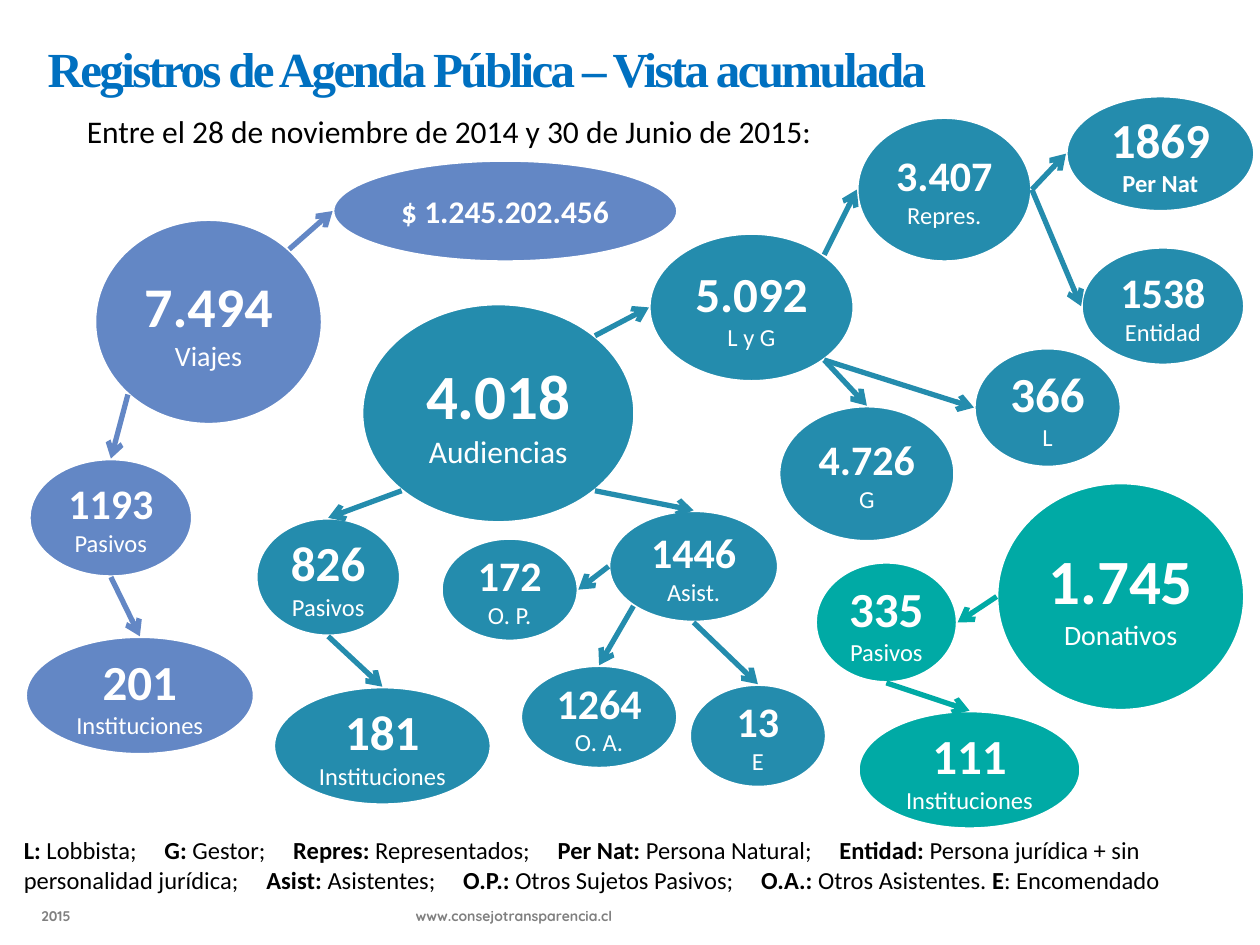
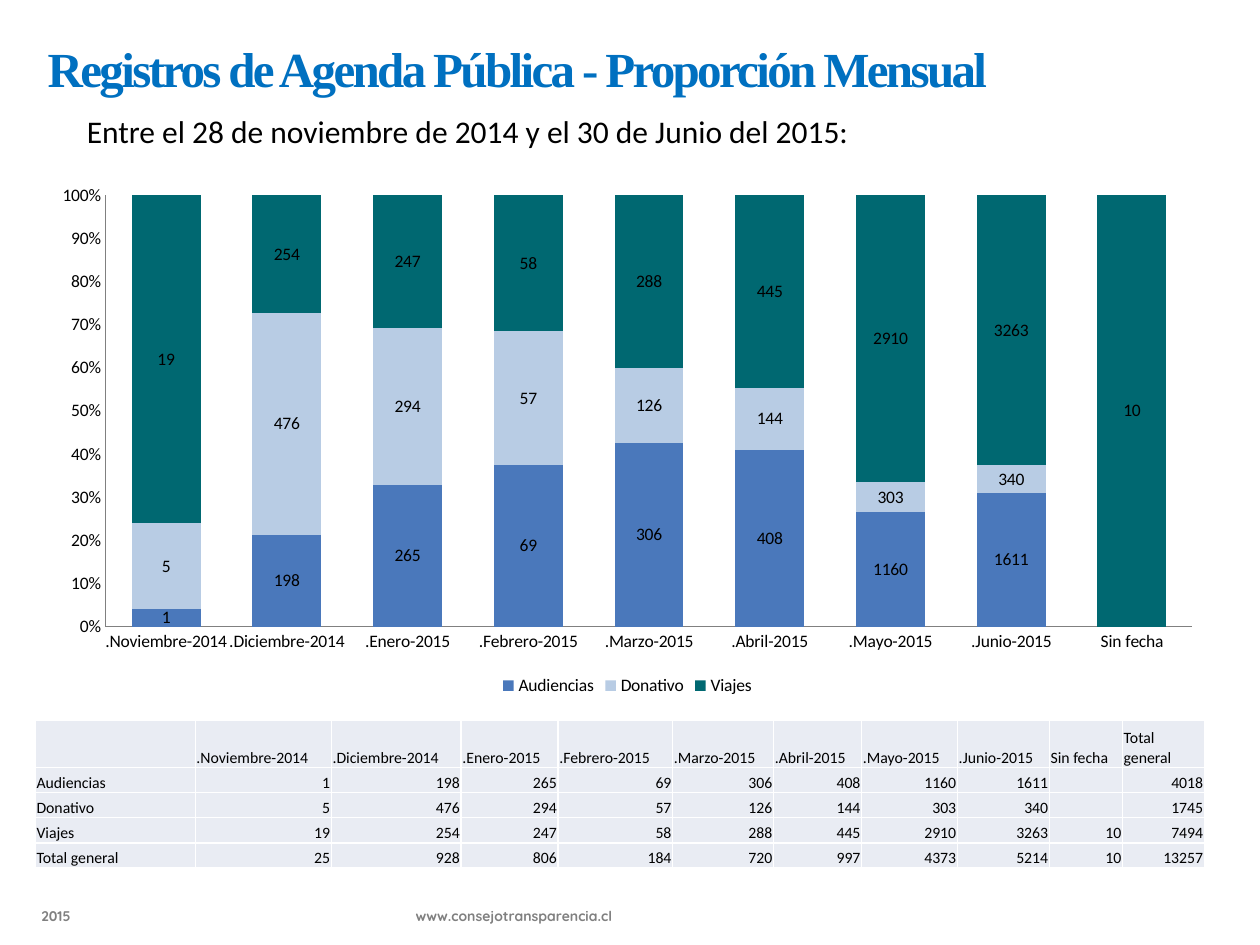
import math
from dataclasses import dataclass

from lxml import etree
from pptx import Presentation
from pptx import util as u
from pptx.chart.data import CategoryChartData
from pptx.dml.color import RGBColor
from pptx.enum import chart as ch, shapes, text
from pptx.oxml.ns import qn


class Theme:
    body, title, footer = "Calibri", "Times New Roman", "Quicksand"
    blue, grey, black, white = "0070C0", "808080", "000000", "FFFFFF"
    trips, hearings, gifts = "6387C5", "248CAD", "00AAA5"
    cell = "E9ECF3"
    series = ("4A78BB", "B8CCE4", "006871")
    title_pt, text_pt, key_pt, chart_pt, table_pt, footer_pt = 28, 18, 14, 10, 9, 8


@dataclass
class Box:
    """A region on a grid of 100 columns by 75 rows."""
    x: float
    y: float
    w: float
    h: float

    def area(self, col, row, cols, rows):
        return Box(self.x + col, self.y + row, cols, rows)

    def emu(self):
        return [grid(v) for v in (self.x, self.y, self.w, self.h)]


def grid(units):
    return u.Inches(units / 10)


PAGE = Box(0, 0, 100, 75)


def rgb(color):
    return RGBColor.from_string(color)


def style(font, size, color=Theme.black, name=Theme.body, bold=False):
    font.size, font.name, font.bold = u.Pt(size), name, bold
    font.color.rgb = rgb(color)


def add_run(p, words, size, color=Theme.black, name=Theme.body, bold=False, spacing=0):
    r = p.add_run()
    r.text = words
    style(r.font, size, color, name, bold)
    if spacing:
        r._r.get_or_add_rPr().set("spc", str(round(spacing * 100)))


def add_text(s, box):
    tf = s.shapes.add_textbox(*box.emu()).text_frame
    tf.word_wrap = True
    return tf.paragraphs[0]


# Shared frame: title, subtitle and footer
def add_frame(s, title, subtitle, box=PAGE):
    add_run(add_text(s, box.area(2.8, 2.6, 92.1, 5.7)), title, Theme.title_pt,
            Theme.blue, Theme.title, True, -1.5)
    p = add_text(s, box.area(5.9, 8.4, 81.1, 4))
    p.alignment = text.PP_ALIGN.JUSTIFY
    add_run(p, subtitle, Theme.text_pt)
    p = add_text(s, box.area(2.3, 71.5, 97.7, 3.4))
    tabs = etree.SubElement(p._p.get_or_add_pPr(), qn("a:tabLst"))
    etree.SubElement(tabs, qn("a:tab"), pos=str(grid(29.7)), algn="l")
    add_run(p, "2015\twww.consejotransparencia.cl", Theme.footer_pt,
            Theme.grey, Theme.footer, True)


# Bubble diagram
# key: (col, row, cols, rows), colour, figure, size, label, label size
BUBBLES = {
    "audiencias": ((26.7, 17.1, 21.7, 17.4), Theme.hearings, "4.018", 36, "Audiencias", 18),
    "donativos": ((77.1, 31.3, 19.7, 18.1), Theme.gifts, "1.745", 36, "Donativos", 16),
    "viajes": ((5.5, 10.4, 18.1, 16.3), Theme.trips, "7.494", 32, "Viajes", 16),
    "monto": ((24.4, 5.7, 27.4, 8.1), Theme.trips, "$ 1.245.202.456", 18, "", 0),
    "viajes_pas": ((0.3, 29.4, 13, 9.4), Theme.trips, "1193", 24, "Pasivos", 14),
    "viajes_inst": ((0, 43.5, 18.2, 9.4), Theme.trips, "201", 28, "Instituciones", 14),
    "l_y_g": ((49.5, 11.5, 16.3, 11.8), Theme.hearings, "5.092", 28, "L y G", 14),
    "aud_pas": ((18.3, 34.1, 11.5, 9.4), Theme.hearings, "826", 28, "Pasivos", 14),
    "aud_inst": ((19.7, 47.5, 17.3, 9.4), Theme.hearings, "181", 28, "Instituciones", 14),
    "repres": ((66, 2.3, 13.9, 11.5), Theme.hearings, "3.407", 24, "Repres.", 14),
    "per_nat": ((82.6, 0.6, 15, 9.2), Theme.hearings, "1869", 28, "Per Nat", 14),
    "entidad": ((83.8, 12.6, 13, 9.4), Theme.hearings, "1538", 24, "Entidad", 14),
    "lobbista": ((75.3, 20.6, 11.7, 9.5), Theme.hearings, "366", 28, "L", 14),
    "gestor": ((59.8, 25.2, 14, 10.8), Theme.hearings, "4.726", 24, "G", 14),
    "don_pas": ((62.7, 37.6, 11.3, 9.6), Theme.gifts, "335", 28, "Pasivos", 14),
    "don_inst": ((66.1, 49.4, 17.7, 9.4), Theme.gifts, "111", 28, "Instituciones", 14),
    "asist": ((46.3, 33.5, 13.5, 8.9), Theme.hearings, "1446", 24, "Asist.", 14),
    "otros_pas": ((33, 35.7, 10.9, 8.2), Theme.hearings, "172", 24, "O. P.", 14),
    "otros_asist": ((39.3, 45.8, 12.5, 8.2), Theme.hearings, "1264", 24, "O. A.", 14),
    "encomendado": ((52.7, 47.3, 10.9, 8.2), Theme.hearings, "13", 24, "E", 14),
}

# Ellipse connection sites, counter-clockwise from the top
TOP, TOP_LEFT, LEFT, LOW_LEFT, BOTTOM, LOW_RIGHT, RIGHT, TOP_RIGHT = range(8)
ARROWS = [
    ("viajes", TOP_RIGHT, "monto", LEFT),
    ("viajes", LOW_LEFT, "viajes_pas", TOP),
    ("viajes_pas", BOTTOM, "viajes_inst", TOP),
    ("audiencias", TOP_RIGHT, "l_y_g", LEFT),
    ("audiencias", LOW_LEFT, "aud_pas", TOP),
    ("audiencias", LOW_RIGHT, "asist", TOP),
    ("aud_pas", BOTTOM, "aud_inst", TOP),
    ("l_y_g", TOP_RIGHT, "repres", LEFT),
    ("l_y_g", LOW_RIGHT, "gestor", TOP),
    ("l_y_g", LOW_RIGHT, "lobbista", LEFT),
    ("repres", RIGHT, "per_nat", LEFT),
    ("repres", RIGHT, "entidad", LEFT),
    ("asist", LEFT, "otros_pas", RIGHT),
    ("asist", LOW_LEFT, "otros_asist", TOP),
    ("asist", BOTTOM, "encomendado", TOP),
    ("donativos", LEFT, "don_pas", RIGHT),
    ("don_pas", BOTTOM, "don_inst", TOP),
]


def add_bubble(s, box, color, figure, size, label, label_size):
    sp = s.shapes.add_shape(shapes.MSO_SHAPE.OVAL, *box.emu())
    sp.shadow.inherit = False
    sp.fill.solid()
    sp.fill.fore_color.rgb = rgb(color)
    sp.line.color.rgb, sp.line.width = rgb(Theme.white), u.Pt(2)
    tf = sp.text_frame
    tf.word_wrap = True
    tf.margin_left = tf.margin_right = 0
    tf.vertical_anchor = text.MSO_ANCHOR.MIDDLE
    p = tf.paragraphs[0]
    p.alignment = text.PP_ALIGN.CENTER
    add_run(p, figure, size, Theme.white, bold=True)
    if label:
        p = tf.add_paragraph()
        p.alignment = text.PP_ALIGN.CENTER
        add_run(p, label, label_size, Theme.white, bold=label == "Per Nat")
    return sp


def site_point(sp, site):
    angle = math.radians(90 + 45 * site)
    return (round(sp.left + sp.width / 2 * (1 + math.cos(angle))),
            round(sp.top + sp.height / 2 * (1 - math.sin(angle))))


def add_arrow(s, start, start_site, end, end_site, color):
    c = s.shapes.add_connector(shapes.MSO_CONNECTOR.STRAIGHT,
                               *site_point(start, start_site), *site_point(end, end_site))
    c.line.color.rgb, c.line.width = rgb(color), u.Pt(3)
    sp_pr = c._element.spPr
    etree.SubElement(sp_pr.find(qn("a:ln")), qn("a:tailEnd"), type="arrow")
    etree.SubElement(sp_pr, qn("a:effectLst"))
    # Join by XML: begin_connect knows only four sites, an ellipse has eight
    joints = c._element.find(".//" + qn("p:cNvCxnSpPr"))
    for tag, sp, site in (("a:stCxn", start, start_site), ("a:endCxn", end, end_site)):
        etree.SubElement(joints, qn(tag), id=str(sp.shape_id), idx=str(site))


def add_diagram(s, box):
    bubbles = {key: add_bubble(s, box.area(*place), *rest)
               for key, (place, *rest) in BUBBLES.items()}
    for start, start_site, end, end_site in ARROWS:
        add_arrow(s, bubbles[start], start_site, bubbles[end], end_site, BUBBLES[start][1])


# Key to the abbreviations
ABBREVIATIONS = [
    ("L: ", "Lobbista;"), ("G: ", "Gestor;"), ("Repres: ", "Representados;"),
    ("Per Nat: ", "Persona Natural;"),
    ("Entidad: ", "Persona jurídica + sin personalidad jurídica;"),
    ("Asist: ", "Asistentes;"), ("O.P.: ", "Otros Sujetos Pasivos;"),
    ("O.A.: ", "Otros Asistentes. "), ("E", ": Encomendado"),
]


def add_key(s, box):
    p = add_text(s, box)
    for short, meaning in ABBREVIATIONS:
        add_run(p, short, Theme.key_pt, bold=True)
        add_run(p, meaning, Theme.key_pt)
        if meaning.endswith(";"):
            add_run(p, " ", Theme.key_pt, spacing=12.6)  # one widened space


# Monthly data
MONTHS = [".Noviembre-2014", ".Diciembre-2014", ".Enero-2015", ".Febrero-2015",
          ".Marzo-2015", ".Abril-2015", ".Mayo-2015", ".Junio-2015", "Sin fecha"]
RECORDS = {
    "Audiencias": [1, 198, 265, 69, 306, 408, 1160, 1611, None],
    "Donativo": [5, 476, 294, 57, 126, 144, 303, 340, None],
    "Viajes": [19, 254, 247, 58, 288, 445, 2910, 3263, 10],
}


def add_month_chart(s, box):
    data = CategoryChartData()
    data.categories = MONTHS
    for name, values in RECORDS.items():
        data.add_series(name, values)
    chart = s.shapes.add_chart(ch.XL_CHART_TYPE.COLUMN_STACKED_100, *box.emu(), data).chart
    style(chart.font, Theme.chart_pt)
    chart.has_title = False
    chart.has_legend = True
    chart.legend.position = ch.XL_LEGEND_POSITION.BOTTOM
    chart.legend.include_in_layout = False
    for axis in (chart.category_axis, chart.value_axis):
        axis.has_major_gridlines = False
        axis.major_tick_mark = axis.minor_tick_mark = ch.XL_TICK_MARK.NONE
        axis.format.line.color.rgb = rgb(Theme.grey)
    labels = chart.value_axis.tick_labels
    labels.number_format, labels.number_format_is_linked = "0%", False
    chart.value_axis.maximum_scale, chart.value_axis.major_unit = 1, 0.1
    plot = chart.plots[0]
    plot.gap_width, plot.overlap, plot.vary_by_categories = 75, 100, False
    for series, color in zip(plot.series, Theme.series):
        series.format.fill.solid()
        series.format.fill.fore_color.rgb = rgb(color)
        series.data_labels.show_value = True


def fill_cell(cell, value, align):
    cell.fill.solid()
    cell.fill.fore_color.rgb = rgb(Theme.cell)
    cell.margin_left = cell.margin_right = cell.margin_top = u.Inches(0.01)
    cell.margin_bottom = 0
    cell.vertical_anchor = text.MSO_ANCHOR.BOTTOM
    p = cell.text_frame.paragraphs[0]
    p.alignment = align
    if value in ("", None):
        etree.SubElement(p._p, qn("a:endParaRPr"), sz=str(Theme.table_pt * 100))
    else:
        add_run(p, str(value), Theme.table_pt)
    # White borders go ahead of the fill
    for i, side in enumerate(("a:lnL", "a:lnR", "a:lnT", "a:lnB")):
        ln = etree.Element(qn(side), w=str(u.Pt(1)))
        solid = etree.SubElement(ln, qn("a:solidFill"))
        etree.SubElement(solid, qn("a:srgbClr"), val=Theme.white)
        cell._tc.get_or_add_tcPr().insert(i, ln)


def add_month_table(s, box):
    totals = [sum(v or 0 for v in column) for column in zip(*RECORDS.values())]
    body = {**RECORDS, "Total general": totals}
    rows = [["", *MONTHS, "Total general"]]
    rows += [[name, *values, sum(v or 0 for v in values)] for name, values in body.items()]
    widths = [12.7, 10.8, 10.3, 7.7, 9.1, 8, 7, 7.6, 7.3, 5.8, 6.5]
    table = s.shapes.add_table(len(rows), len(widths), *box.emu()).table
    table.first_row = table.horz_banding = False
    for column, width in zip(table.columns, widths):
        column.width = grid(width)
    for i, row in enumerate(rows):
        table.rows[i].height = grid(2 if i else 3.7)
        for j, value in enumerate(row):
            align = text.PP_ALIGN.RIGHT if i and j else text.PP_ALIGN.LEFT
            fill_cell(table.cell(i, j), value, align)


def main():
    prs = Presentation()
    prs.slide_width, prs.slide_height = grid(PAGE.w), grid(PAGE.h)
    blank = prs.slide_layouts[6]

    s = prs.slides.add_slide(blank)
    add_frame(s, "Registros de Agenda Pública – Vista acumulada",
              "Entre el 28 de noviembre de 2014 y 30 de Junio de 2015:")
    add_diagram(s, PAGE.area(2, 7, 98, 59))
    add_key(s, PAGE.area(0.9, 65.8, 97.9, 5.7))

    s = prs.slides.add_slide(blank)
    add_frame(s, "Registros de Agenda Pública - Proporción Mensual",
              "Entre el 28 de noviembre de 2014 y el 30 de Junio del 2015:")
    add_month_table(s, PAGE.area(2.8, 57.2, 92.9, 11.7))
    add_month_chart(s, PAGE.area(3.1, 13.9, 93.4, 41.7))

    prs.save("out.pptx")


if __name__ == "__main__":
    main()
